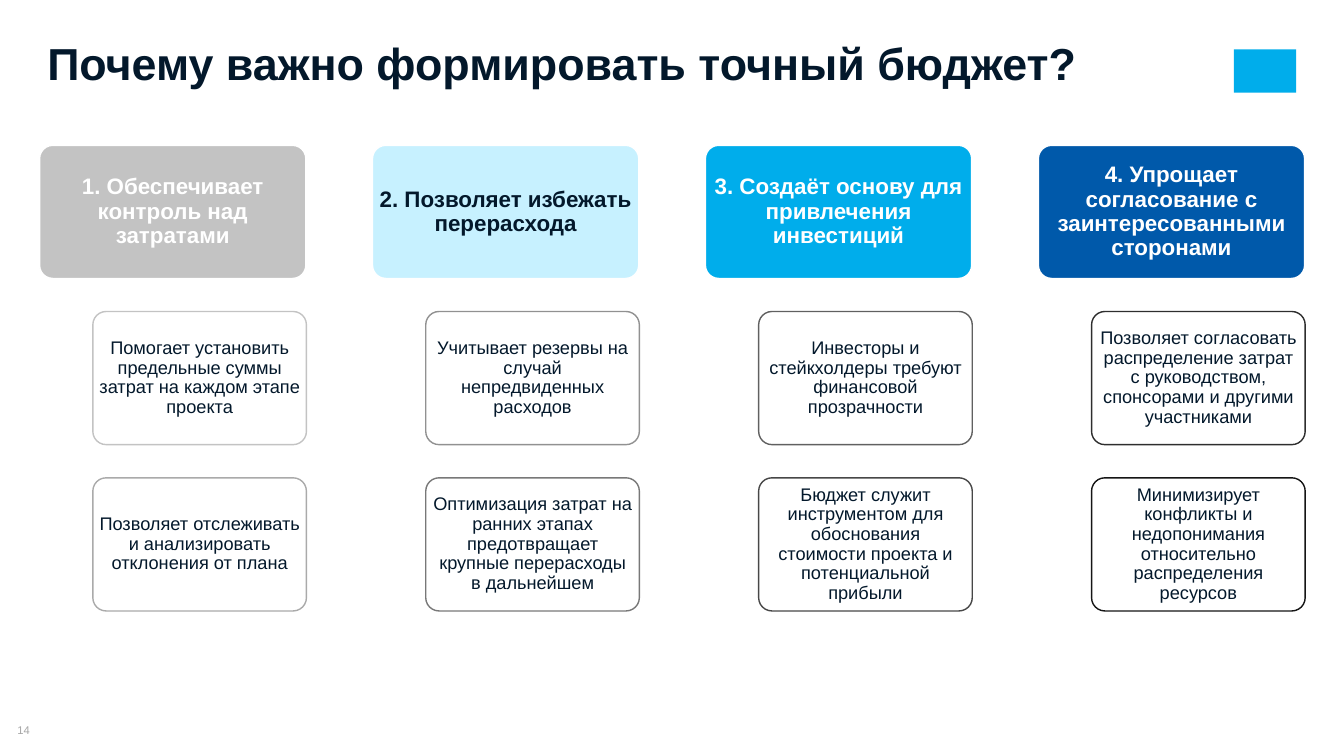
import lxml.etree
import pptx
import pptx.dml.color
import pptx.enum.shapes
import pptx.enum.text
import pptx.oxml.ns
import pptx.util

Pt = pptx.util.Pt
Align = pptx.enum.text.PP_ALIGN
Anchor = pptx.enum.text.MSO_ANCHOR
AutoSize = pptx.enum.text.MSO_AUTO_SIZE
ShapeType = pptx.enum.shapes.MSO_SHAPE


class Theme:
    font = "Arial"
    title_size, header_size, card_size, number_size = 32, 16, 13, 8
    dark, white, number, accent = "03182B", "FFFFFF", "A6A6A6", "00ADEB"
    gray, light, blue = "C3C3C3", "C7F1FF", "0059AA"
    outline_from, outline_to = 195, 21  # gray levels, first to last card


# Grid, in points
COLUMN_LEFT, COLUMN_STEP = 28.3, 237.8
HEADER_TOP, HEADER_WIDTH = 103.8, 190.2
CARD_TOP, CARD_STEP, CARD_INDENT, CARD_WIDTH = 222.5, 118.8, 38, 152.6
BOX_HEIGHT = 95.1

# Header, header fill, header text colour, cards
COLUMNS = [
    ("1. Обеспечивает контроль над затратами", Theme.gray, Theme.white, [
        "Помогает установить предельные суммы затрат на каждом этапе проекта",
        "Позволяет отслеживать и анализировать отклонения от плана"]),
    ("2. Позволяет избежать перерасхода", Theme.light, Theme.dark, [
        "Учитывает резервы на случай непредвиденных расходов",
        "Оптимизация затрат на ранних этапах предотвращает "
        "крупные перерасходы в дальнейшем"]),
    ("3. Создаёт основу для привлечения инвестиций", Theme.accent, Theme.white, [
        "Инвесторы и стейкхолдеры требуют финансовой прозрачности",
        "Бюджет служит инструментом для обоснования стоимости проекта "
        "и потенциальной прибыли"]),
    ("4. Упрощает согласование с заинтересованными сторонами",
     Theme.blue, Theme.white, [
         "Позволяет согласовать распределение затрат с руководством, "
         "спонсорами и другими участниками",
         "Минимизирует конфликты и недопонимания относительно "
         "распределения ресурсов"]),
]


def set_attributes(target, values):
    for name, value in values.items():
        setattr(target, name, value)


def rgb(color):
    return pptx.dml.color.RGBColor.from_string(color)


def place(shape, left, top, width, height):
    set_attributes(shape, {"left": Pt(left), "top": Pt(top),
                           "width": Pt(width), "height": Pt(height)})


def write(shape, text, size, color, bold=False, align=Align.CENTER,
          anchor=Anchor.MIDDLE, spacing=0.9, inset=(0, 0),
          auto_size=AutoSize.NONE):
    frame = shape.text_frame
    side, edge = Pt(inset[0]), Pt(inset[1])
    set_attributes(frame, {
        "word_wrap": True, "auto_size": auto_size, "vertical_anchor": anchor,
        "margin_left": side, "margin_right": side,
        "margin_top": edge, "margin_bottom": edge})
    paragraph = frame.paragraphs[0]
    set_attributes(paragraph, {"alignment": align, "line_spacing": spacing})
    run = paragraph.add_run()
    run.text = text
    set_attributes(run.font, {"name": Theme.font, "size": Pt(size), "bold": bold})
    run.font.color.rgb = rgb(color)


def add_box(slide, kind, bounds, fill, outline=None):
    shape = slide.shapes.add_shape(kind, *map(Pt, bounds))
    shape.shadow.inherit = False
    shape.fill.solid()
    shape.fill.fore_color.rgb = rgb(fill)
    if outline:
        shape.line.color.rgb = rgb(outline)
        shape.line.width = Pt(1)
    else:
        shape.line.fill.background()
    return shape


def add_text_box(slide, bounds, fill, outline, text, size, color, bold=False):
    shape = add_box(slide, ShapeType.ROUNDED_RECTANGLE, bounds, fill, outline)
    shape.adjustments[0] = 0.1
    write(shape, text, size, color, bold, inset=(1.9, 1.4))
    return shape


def set_opacity(shape, percent):
    color = shape.fill._xPr.find(".//" + pptx.oxml.ns.qn("a:srgbClr"))
    alpha = lxml.etree.SubElement(color, pptx.oxml.ns.qn("a:alpha"))
    alpha.set("val", str(percent * 1000))


def outline_gray(index, count):
    span = Theme.outline_to - Theme.outline_from
    level = round(Theme.outline_from + span * index / (count - 1))
    return f"{level:02X}" * 3


def add_column(slide, index, header, fill, color, cards):
    left = COLUMN_LEFT + COLUMN_STEP * index
    add_text_box(slide, (left, HEADER_TOP, HEADER_WIDTH, BOX_HEIGHT),
                 fill, Theme.white, header, Theme.header_size, color, bold=True)
    for row, text in enumerate(cards):
        bounds = (left + CARD_INDENT, CARD_TOP + CARD_STEP * row,
                  CARD_WIDTH, BOX_HEIGHT)
        outline = outline_gray(index * len(cards) + row, len(COLUMNS) * len(cards))
        card = add_text_box(slide, bounds, Theme.white, outline, text,
                            Theme.card_size, Theme.dark)
        set_opacity(card, 90)


def main():
    presentation = pptx.Presentation()
    set_attributes(presentation, {"slide_width": Pt(960), "slide_height": Pt(540)})
    slide = presentation.slides.add_slide(presentation.slide_layouts[5])

    # Title
    title = slide.shapes.title
    place(title, 33.8, 33.1, 756.7, 31)
    write(title, "Почему важно формировать точный бюджет?", Theme.title_size,
          Theme.dark, bold=True, align=Align.LEFT, anchor=Anchor.TOP,
          spacing=0.8, auto_size=AutoSize.SHAPE_TO_FIT_TEXT)

    # Corner mark and page number
    add_box(slide, ShapeType.RECTANGLE, (881.3, 35.3, 44.6, 31), Theme.accent)
    number = slide.shapes.add_textbox(Pt(0), Pt(517), Pt(33.8), Pt(9.4))
    write(number, "14", Theme.number_size, Theme.number, spacing=1.0)

    # Four reasons with their cards
    for index, column in enumerate(COLUMNS):
        add_column(slide, index, *column)

    presentation.save("out.pptx")


if __name__ == "__main__":
    main()
